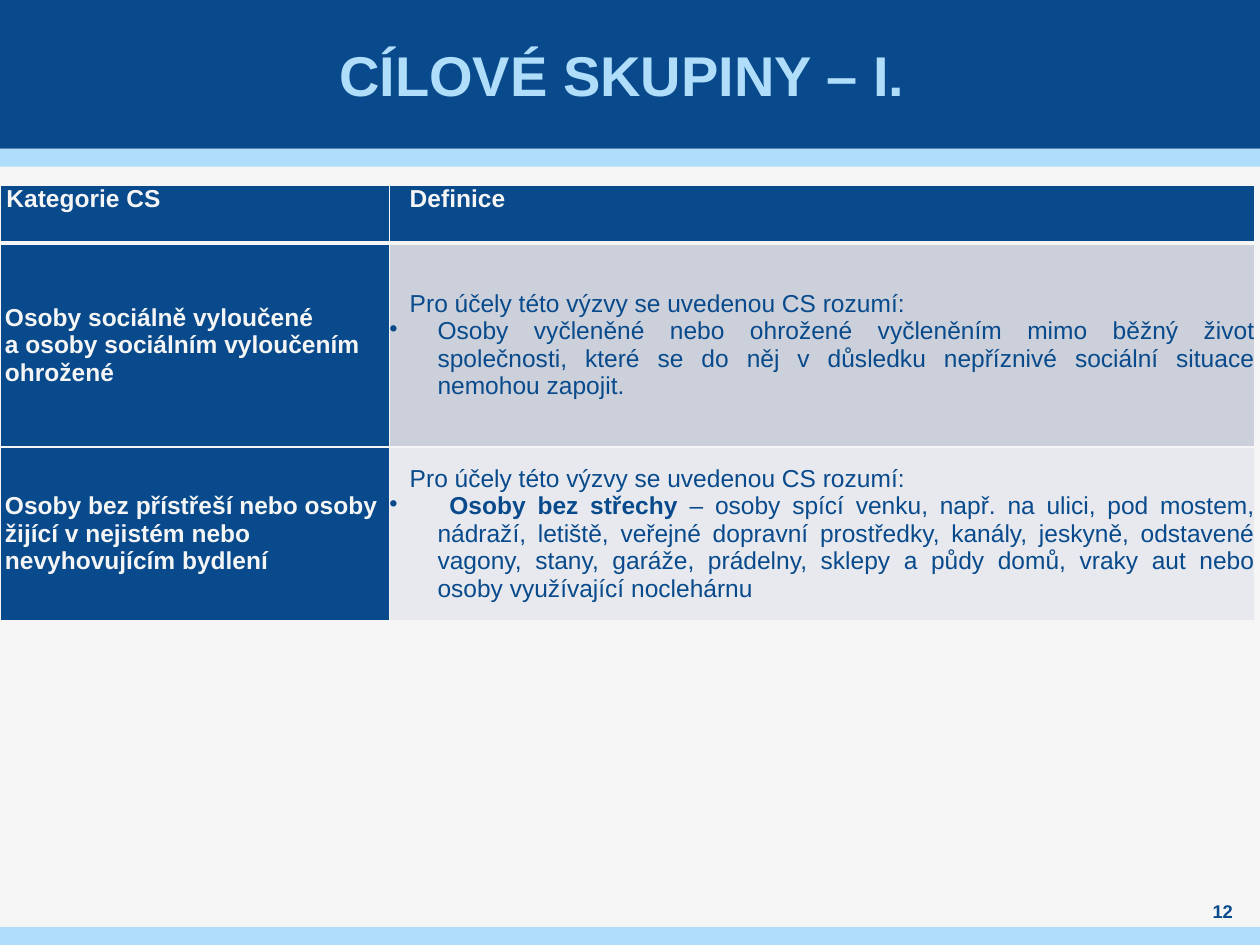
import copy
from dataclasses import dataclass

import pptx
import pptx.dml.color
import pptx.enum.shapes
import pptx.enum.text
import pptx.oxml
import pptx.oxml.ns
import pptx.util

Cm = pptx.util.Cm
Pt = pptx.util.Pt
Align = pptx.enum.text.PP_ALIGN
Anchor = pptx.enum.text.MSO_ANCHOR

COLORS = {"navy": "084A8B", "sky": "AFDDFA", "paper": "F5F5F5",
          "gray": "CCD0DA", "light": "E7E9EE"}
FONT = "Arial"
BULLET_INDENT = 0.97
TEXT_INDENT = 0.41


@dataclass
class Bar:
    top: float
    height: float
    color: str


@dataclass
class Span:
    text: str
    bold: bool = False


@dataclass
class Para:
    spans: list[Span]
    color: str = "navy"
    indent: float = TEXT_INDENT
    align: Align | None = Align.JUSTIFY
    bullet: bool = False
    size: float = 14


@dataclass
class Cell:
    paras: list[Para]
    fill: str
    anchor: Anchor = Anchor.MIDDLE


def rgb(name: str) -> pptx.dml.color.RGBColor:
    return pptx.dml.color.RGBColor.from_string(COLORS[name])


def draw_bar(slide, bar: Bar, width: int) -> None:
    shape = slide.shapes.add_shape(pptx.enum.shapes.MSO_SHAPE.RECTANGLE,
                                   0, Cm(bar.top), width, Cm(bar.height))
    shape.shadow.inherit = False
    shape.fill.solid()
    shape.fill.fore_color.rgb = rgb(bar.color)
    shape.line.fill.background()


def write_paras(frame, paras: list[Para]) -> None:
    for index, para in enumerate(paras):
        paragraph = frame.add_paragraph() if index else frame.paragraphs[0]
        paragraph.alignment = para.align
        for span in para.spans:
            for number, line in enumerate(span.text.split("\n")):
                if number:
                    paragraph.add_line_break()
                    line_break = paragraph._p[-1]
                run = paragraph.add_run()
                run.text = line
                formats = {"name": FONT, "size": Pt(para.size), "bold": span.bold}
                for attribute, value in formats.items():
                    setattr(run.font, attribute, value)
                run.font.color.rgb = rgb(para.color)
                if number:
                    line_break.append(copy.deepcopy(run._r.rPr))
        properties = paragraph._p.get_or_add_pPr()
        properties.set("marL", str(Cm(para.indent)))
        properties.set("indent", str(-Cm(para.indent) if para.bullet else 0))
        if para.bullet:
            properties.append(pptx.oxml.parse_xml(
                f'<a:buChar {pptx.oxml.ns.nsdecls("a")} char="•"/>'))


def set_frame(frame, anchor: Anchor, side_margin: float = 0) -> None:
    formats = {"margin_left": Cm(side_margin), "margin_right": Cm(side_margin),
               "margin_top": 0, "margin_bottom": 0, "word_wrap": True,
               "vertical_anchor": anchor,
               "auto_size": pptx.enum.text.MSO_AUTO_SIZE.NONE}
    for attribute, value in formats.items():
        setattr(frame, attribute, value)


def draw_borders(cell, widths: dict[str, float]) -> None:
    for side, width in widths.items():
        cell._tc.get_or_add_tcPr().append(pptx.oxml.parse_xml(
            f'<a:ln{side} {pptx.oxml.ns.nsdecls("a")} w="{Pt(width)}"><a:solidFill>'
            f'<a:srgbClr val="{COLORS["paper"]}"/></a:solidFill></a:ln{side}>'))


def draw_table(slide, rows: list[list[Cell]], widths: list[float],
               heights: list[float], top: float) -> None:
    table = slide.shapes.add_table(len(rows), len(widths), 0, Cm(top),
                                   Cm(sum(widths)), Cm(sum(heights))).table
    table.horz_banding = False
    for column, width in zip(table.columns, widths):
        column.width = Cm(width)
    for row, height in zip(table.rows, heights):
        row.height = Cm(height)
    for r, row in enumerate(rows):
        for c, content in enumerate(row):
            cell = table.cell(r, c)
            for side in ("left", "right", "top", "bottom"):
                setattr(cell, f"margin_{side}", 0)
            cell.vertical_anchor = content.anchor
            # The rule under the header is thicker
            draw_borders(cell, {"L": 1, "R": 1, "T": 3 if r == 1 else 1,
                                "B": 3 if r == 0 else 1})
            cell.fill.solid()
            cell.fill.fore_color.rgb = rgb(content.fill)
            write_paras(cell.text_frame, content.paras)


def header(text: str, indent: float) -> Cell:
    return Cell([Para([Span(text, True)], "paper", indent, None)], "navy", Anchor.TOP)


def category(text: str) -> Cell:
    return Cell([Para([Span(text, True)], "paper", 0.1, None)], "navy")


def definition(spans: list[Span], fill: str) -> Cell:
    intro = Para([Span("Pro účely této výzvy se uvedenou CS rozumí: ")])
    return Cell([intro, Para(spans, indent=BULLET_INDENT, bullet=True)], fill)


BARS = [Bar(3, 0.36, "sky"), Bar(0, 3, "navy"), Bar(18.69, 0.36, "sky")]
TARGET_GROUPS = [
    [header("Kategorie CS", 0.13), header("Definice", TEXT_INDENT)],
    [category("Osoby sociálně vyloučené \na osoby sociálním vyloučením ohrožené"),
     definition([Span("Osoby vyčleněné nebo ohrožené vyčleněním mimo běžný život "
                      "společnosti, které se do něj v důsledku nepříznivé sociální "
                      "situace nemohou zapojit.")], "gray")],
    [category("Osoby bez přístřeší nebo osoby žijící v nejistém nebo "
              "nevyhovujícím bydlení"),
     definition([Span(" "), Span("Osoby bez střechy ", True),
                 Span("– osoby spící venku, např. na ulici, pod mostem, nádraží, "
                      "letiště, veřejné dopravní prostředky, kanály, jeskyně, "
                      "odstavené vagony, stany, garáže, prádelny, sklepy a půdy "
                      "domů, vraky aut nebo osoby využívající noclehárnu")], "light")],
]


def main() -> None:
    deck = pptx.Presentation()
    deck.slide_width, deck.slide_height = Cm(25.4), Cm(19.05)
    slide = deck.slides.add_slide(deck.slide_layouts[5])
    slide.background.fill.solid()
    slide.background.fill.fore_color.rgb = rgb("paper")

    # Bands, with the title brought in front of them
    for bar in BARS:
        draw_bar(slide, bar, deck.slide_width)
    title = slide.shapes.title
    slide.shapes._spTree.append(title._element)
    place = {"left": Cm(1), "top": 0, "width": Cm(23.4), "height": Cm(3)}
    for attribute, value in place.items():
        setattr(title, attribute, value)
    set_frame(title.text_frame, Anchor.MIDDLE, 0.1)
    write_paras(title.text_frame, [Para([Span("CÍLOVÉ SKUPINY – I. ", True)],
                                        "sky", 0, Align.CENTER, size=32)])

    # Target groups
    draw_table(slide, TARGET_GROUPS, [7.85, 17.45], [1.17, 4.11, 3.5], 3.73)

    # Page number
    page_number = slide.shapes.add_textbox(Cm(24), Cm(18.11), Cm(1.3), Cm(0.51))
    set_frame(page_number.text_frame, Anchor.MIDDLE)
    write_paras(page_number.text_frame, [Para([Span("12", True)], "navy", 0,
                                              Align.CENTER, size=10.5)])
    deck.save("out.pptx")


if __name__ == "__main__":
    main()
